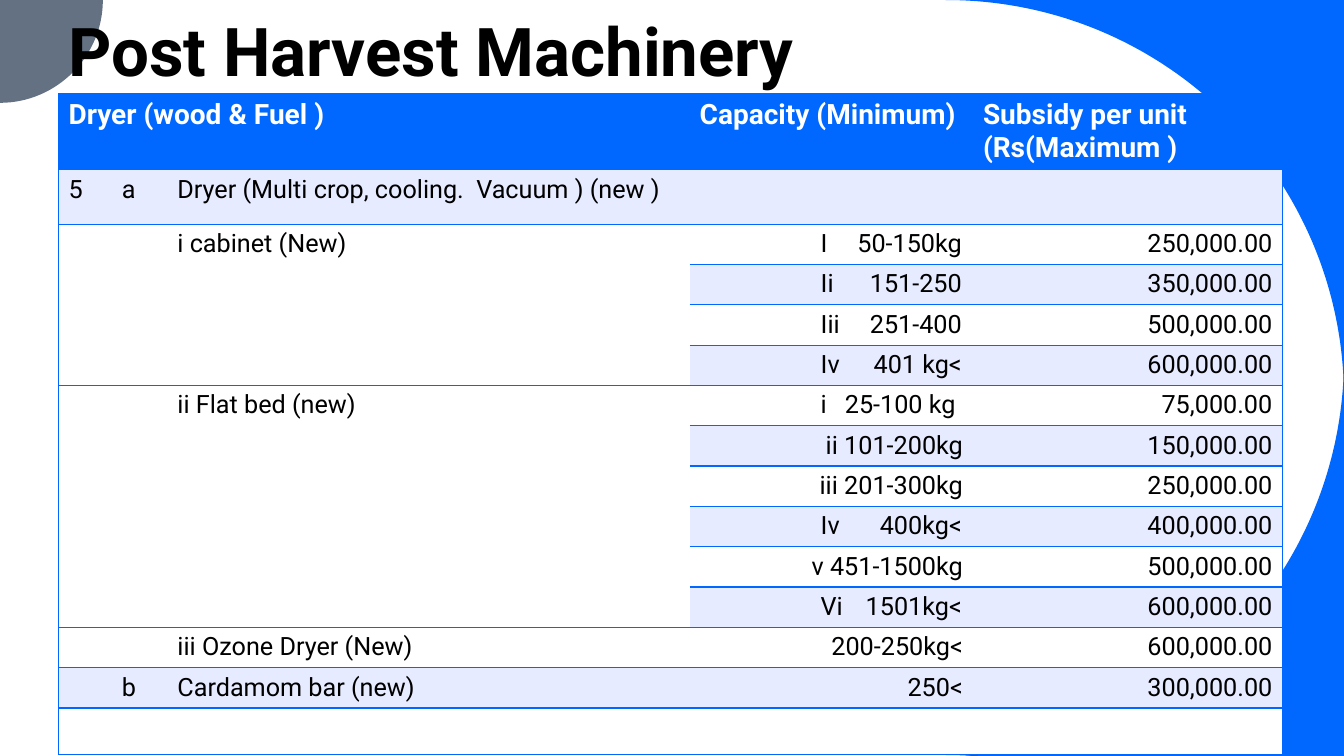
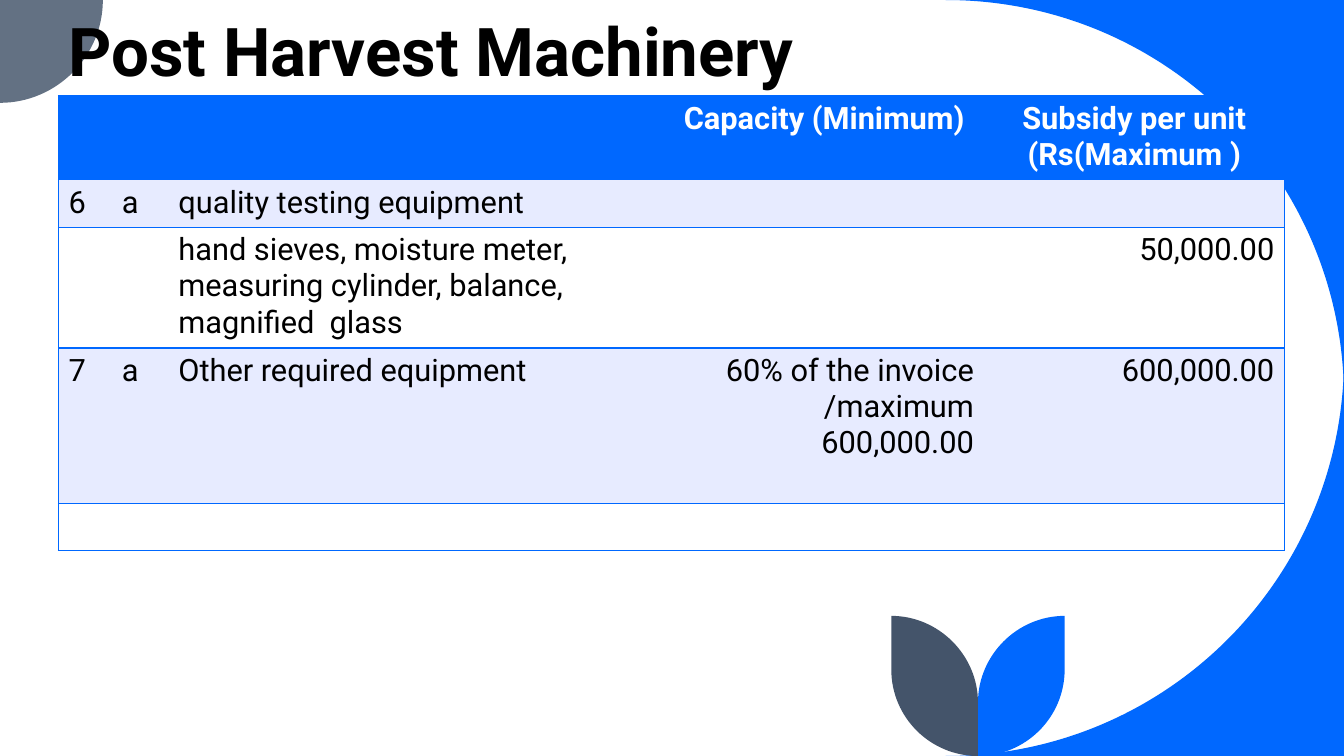
from typing import NamedTuple

import pptx
import pptx.dml.color
import pptx.enum.text
import pptx.oxml
import pptx.oxml.ns
import pptx.util

Inches = pptx.util.Inches
Pt = pptx.util.Pt
ALIGN = pptx.enum.text.PP_ALIGN
Point = tuple[float, float]

COLORS = {
    "blue": "0068FF",
    "gray": "637183",
    "slate": "44546A",
    "lavender": "E7EBFF",
    "white": "FFFFFF",
    "black": "000000",
}
FONT = "Roboto"
TITLE = "Post Harvest Machinery"
WIDTH, HEIGHT = 13.33, 7.5
NO_GRID_STYLE = "{2D5ABB26-0587-4C30-8999-92F81FD0307C}"
CAPACITY = 3  # first right-aligned column
NUMERAL_LEFT = 1.3  # where a tabbed capacity numeral starts
CELL_MARGIN = 0.1


class Ornament(NamedTuple):
    color: str
    start: Point
    segments: list[list[Point]]  # one point for a line, three for a curve


class Merge(NamedTuple):
    row: int
    column: int
    height: int
    width: int


class Grid(NamedTuple):
    top: float
    columns: list[float]
    heights: list[float]
    rows: list[list[str]]
    merges: list[Merge]
    header_size: int
    body_size: int
    header_align: ALIGN


def leaf(color: str, side: int) -> Ornament:
    """One leaf of the pair; side is -1 for the left and 1 for the right."""
    stem = 9.7
    tip, near, middle, far = (stem + side * reach for reach in (0.86, 0.39, 0.48, 0.86))
    return Ornament(color, (tip, 6.11), [
        [(tip, 6.64)],
        [(far, 7.12), (stem + side * 0.47, 7.5), (stem, 7.5)],
        [(stem, 6.97)],
        [(stem, 6.5), (near, 6.11), (tip, 6.11)],
    ])


# Shared decoration: corner curves and the pair of leaves
ORNAMENTS = [
    Ornament("blue", (WIDTH, 0), [[(9.38, 0)], [(11.57, 0), (WIDTH, 1.77), (WIDTH, 3.95)]]),
    Ornament("blue", (WIDTH, 3.55), [[(WIDTH, 5.73), (11.57, HEIGHT), (9.38, HEIGHT)], [(WIDTH, HEIGHT)]]),
    Ornament("gray", (0, 0), [[(1.02, 0)], [(1.02, 0.56), (0.56, 1.02), (0, 1.02)]]),
    leaf("blue", 1),
    leaf("slate", -1),
]

DRYERS = Grid(
    top=0.93,
    columns=[0.53, 0.55, 5.18, 2.81, 3.07],
    heights=[0.7, 0.54] + [0.4] * 12 + [0.46],
    rows=[
        ["Dryer (wood & Fuel )", "", "", "Capacity (Minimum)", "Subsidy per unit (Rs(Maximum )"],
        ["5", "a", "Dryer (Multi crop, cooling.  Vacuum ) (new )", "", ""],
        ["", "", "i cabinet (New)", "I\t50-150kg", "250,000.00"],
        ["", "", "", "Ii\t151-250", "350,000.00"],
        ["", "", "", "Iii\t251-400", "500,000.00"],
        ["", "", "", "Iv\t401 kg<", "600,000.00"],
        ["", "", "ii Flat bed (new)", "i\t25-100 kg ", "75,000.00"],
        ["", "", "", "ii 101-200kg", "150,000.00"],
        ["", "", "", "iii 201-300kg", "250,000.00"],
        ["", "", "", "Iv\t400kg<", "400,000.00"],
        ["", "", "", "v 451-1500kg", "500,000.00"],
        ["", "", "", "Vi\t1501kg<", "600,000.00"],
        ["", "", "iii Ozone Dryer (New)", "200-250kg<", "600,000.00"],
        ["", "b", "Cardamom bar (new)", "250<", "300,000.00"],
        [""] * 5,
    ],
    merges=[Merge(0, 0, 1, 3), Merge(14, 0, 1, 5)]
    + [Merge(row, column, height, 1) for row, height in ((2, 4), (6, 6)) for column in range(3)],
    header_size=20,
    body_size=18,
    header_align=ALIGN.LEFT,
)

EQUIPMENT = Grid(
    top=0.95,
    columns=[0.53, 0.56, 4.92, 3.17, 2.98],
    heights=[0.83, 0.47, 1.19, 1.54, 0.47],
    rows=[
        ["", "", "", "Capacity (Minimum)", "Subsidy per unit (Rs(Maximum )"],
        ["6", "a", "quality testing equipment", "", ""],
        ["", "", "hand sieves, moisture meter, measuring cylinder, balance, magnified  glass", "", "50,000.00"],
        ["7", "a", "Other required equipment", "60% of the invoice /maximum 600,000.00", "600,000.00"],
        [""] * 5,
    ],
    merges=[Merge(0, 0, 1, 3), Merge(4, 0, 1, 5)],
    header_size=22,
    body_size=22,
    header_align=ALIGN.CENTER,
)


def rgb(name: str) -> pptx.dml.color.RGBColor:
    return pptx.dml.color.RGBColor.from_string(COLORS[name])


def add_span(para, text: str, size: int, color: str, bold: bool) -> None:
    span = para.add_run()
    span.text = text
    span.font.name = FONT
    span.font.size = Pt(size)
    span.font.bold = bold
    span.font.color.rgb = rgb(color)


def add_ornament(page, ornament: Ornament) -> None:
    builder = page.shapes.build_freeform(Inches(ornament.start[0]), Inches(ornament.start[1]), scale=1.0)
    points = [point for segment in ornament.segments for point in segment]
    builder.add_line_segments([(Inches(x), Inches(y)) for x, y in points], close=True)
    shape = builder.convert_to_shape()
    shape.shadow.inherit = False
    shape.fill.solid()
    shape.fill.fore_color.rgb = rgb(ornament.color)
    shape.line.fill.background()

    # Join each three points of a curve into one Bezier segment
    lines = iter(list(shape.element.iter(pptx.oxml.ns.qn("a:lnTo"))))
    for segment in ornament.segments:
        steps = [next(lines) for _ in segment]
        if len(steps) == 3:
            curve = pptx.oxml.parse_xml(f'<a:cubicBezTo {pptx.oxml.ns.nsdecls("a")}/>')
            steps[0].addprevious(curve)
            for step in steps:
                curve.append(step[0])
                step.getparent().remove(step)


def add_title(page) -> None:
    box = page.shapes.add_textbox(Inches(0.58), Inches(0.13), Inches(10.66), Inches(0.82))
    frame = box.text_frame
    frame.word_wrap = True
    frame.vertical_anchor = pptx.enum.text.MSO_ANCHOR.BOTTOM
    para = frame.paragraphs[0]
    para.line_spacing = 0.9
    add_span(para, TITLE, 48, "black", True)


def add_borders(cell, sides: str) -> None:
    properties = cell._tc.get_or_add_tcPr()
    for side in sides:
        properties.append(pptx.oxml.parse_xml(
            f'<a:ln{side} {pptx.oxml.ns.nsdecls("a")} w="12700"><a:solidFill>'
            f'<a:srgbClr val="{COLORS["blue"]}"/></a:solidFill></a:ln{side}>'))


def add_right_tab(para, position: float) -> None:
    para._p.get_or_add_pPr().append(pptx.oxml.parse_xml(
        f'<a:tabLst {pptx.oxml.ns.nsdecls("a")}><a:tab pos="{Inches(position)}" algn="r"/></a:tabLst>'))


def fill_cell(cell, grid: Grid, row: int, column: int) -> None:
    text = grid.rows[row][column]
    header = row == 0
    cell.fill.solid()
    cell.fill.fore_color.rgb = rgb("blue" if header else "lavender" if row % 2 else "white")
    if not text:
        cell.margin_top = cell.margin_bottom = 0
        return
    para = cell.text_frame.paragraphs[0]
    if header:
        para.alignment = grid.header_align
    elif "\t" in text:
        cell.margin_left = Inches(NUMERAL_LEFT)
        add_right_tab(para, grid.columns[column] - NUMERAL_LEFT - CELL_MARGIN - 0.01)
    elif column >= CAPACITY:
        para.alignment = ALIGN.RIGHT
    size = grid.header_size if header else grid.body_size
    add_span(para, text, size, "white" if header else "black", header)


def add_grid(page, grid: Grid) -> None:
    frame = page.shapes.add_table(
        len(grid.rows), len(grid.columns), Inches(0.58), Inches(grid.top),
        Inches(sum(grid.columns)), Inches(sum(grid.heights)))
    next(frame.element.iter(pptx.oxml.ns.qn("a:tableStyleId"))).text = NO_GRID_STYLE
    table = frame.table
    table.first_row = table.horz_banding = False
    for column, width in zip(table.columns, grid.columns):
        column.width = Inches(width)
    for row, height in zip(table.rows, grid.heights):
        row.height = Inches(height)
    for merge in grid.merges:
        last = table.cell(merge.row + merge.height - 1, merge.column + merge.width - 1)
        table.cell(merge.row, merge.column).merge(last)

    # Outer edges and row rules, left out inside vertical merges
    last_column = len(grid.columns) - 1
    for row in range(len(grid.rows)):
        in_tall_merge = any(m.row < row < m.row + m.height for m in grid.merges)
        full_width = Merge(row, 0, 1, last_column + 1) in grid.merges
        for column in range(len(grid.columns)):
            cell = table.cell(row, column)
            sides = "L" if column == 0 else ""
            sides += "R" if column == last_column or (full_width and column == 0) else ""
            sides += "" if in_tall_merge and cell.is_spanned else "TB"
            add_borders(cell, sides)
            fill_cell(cell, grid, row, column)


def main() -> None:
    deck = pptx.Presentation()
    deck.slide_width, deck.slide_height = Inches(WIDTH), Inches(HEIGHT)
    for grid in (DRYERS, EQUIPMENT):
        page = deck.slides.add_slide(deck.slide_layouts[6])
        for ornament in ORNAMENTS:
            add_ornament(page, ornament)
        add_grid(page, grid)
        add_title(page)
    deck.save("out.pptx")


if __name__ == "__main__":
    main()
